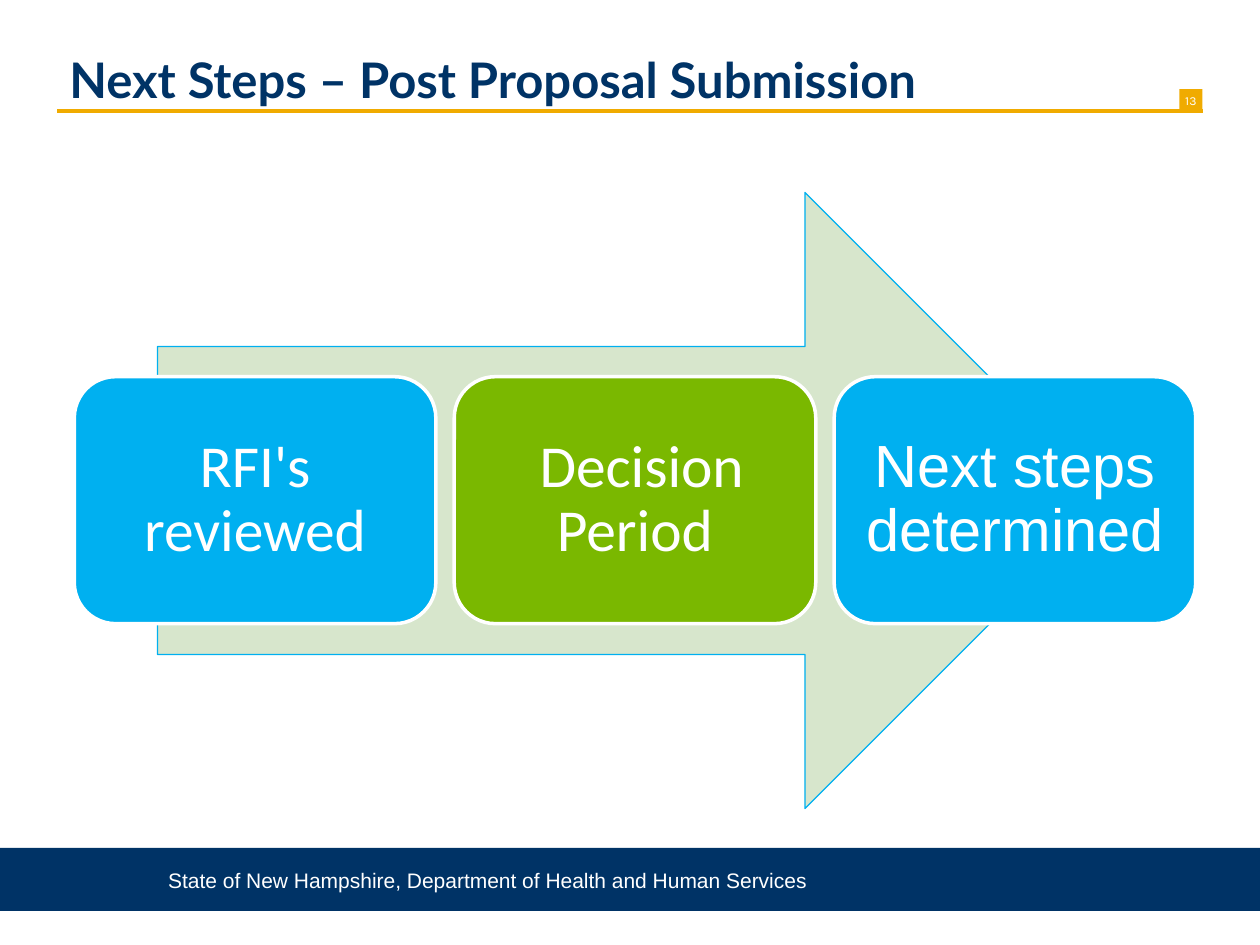
from dataclasses import dataclass

from lxml import etree
from pptx import Presentation
from pptx.dml.color import RGBColor
from pptx.enum.shapes import MSO_CONNECTOR, MSO_SHAPE
from pptx.enum.text import MSO_ANCHOR, PP_ALIGN
from pptx.oxml.ns import qn
from pptx.util import Pt

RECT = MSO_SHAPE.RECTANGLE
ROUNDED = MSO_SHAPE.ROUNDED_RECTANGLE
ARROW = MSO_SHAPE.RIGHT_ARROW
STRAIGHT = MSO_CONNECTOR.STRAIGHT
TOP, MIDDLE, BOTTOM = MSO_ANCHOR.TOP, MSO_ANCHOR.MIDDLE, MSO_ANCHOR.BOTTOM
LEFT, CENTER = PP_ALIGN.LEFT, PP_ALIGN.CENTER

NAVY, GOLD, WHITE = "003366", "F0AB00", "FFFFFF"
BLUE, GREEN, PALE_GREEN = "00B0F0", "7AB800", "D7E6CC"

STEP_LEFT, STEP_TOP = 42.5, 215.3
STEP_WIDTH, STEP_HEIGHT = 206.6, 141.1
STEP_PITCH = 217.1


@dataclass
class Box:
    left: float
    top: float
    width: float
    height: float

    def in_points(self):
        return Pt(self.left), Pt(self.top), Pt(self.width), Pt(self.height)


@dataclass
class Style:
    font: str
    size: float
    color: str = WHITE
    bold: bool = False


@dataclass
class Step:
    label: str
    fill: str
    font: str


STEPS = [
    Step("RFI's reviewed", BLUE, "Calibri"),
    Step("\u00a0Decision Period".replace("\u00a0", " "), GREEN, "Calibri"),
    Step("Next steps determined", BLUE, "Arial"),
]


def rgb(color: str) -> RGBColor:
    return RGBColor.from_string(color)


def add_filled(slide, kind, box: Box, fill: str, line: str = "", weight: float = 0):
    shape = slide.shapes.add_shape(kind, *box.in_points())
    shape.shadow.inherit = False
    shape.fill.solid()
    shape.fill.fore_color.rgb = rgb(fill)
    if line:
        shape.line.color.rgb = rgb(line)
        shape.line.width = Pt(weight)
    else:
        shape.line.fill.background()
    return shape


def write(shape, text: str, style: Style, anchor=TOP, align=LEFT,
          inset_x: float = 7.2, inset_y: float = 3.6, wrap: bool = True):
    frame = shape.text_frame
    frame.word_wrap = wrap
    frame.vertical_anchor = anchor
    frame.margin_left = frame.margin_right = Pt(inset_x)
    frame.margin_top = frame.margin_bottom = Pt(inset_y)
    paragraph = frame.paragraphs[0]
    paragraph.alignment = align
    run = paragraph.add_run()
    run.text = text
    run.font.name = style.font
    run.font.size = Pt(style.size)
    run.font.bold = style.bold
    run.font.color.rgb = rgb(style.color)
    return paragraph


def add_rule(slide, left: float, right: float, y: float, color: str, weight: float):
    rule = slide.shapes.add_connector(STRAIGHT, Pt(left), Pt(y), Pt(right), Pt(y))
    rule.line.color.rgb = rgb(color)
    rule.line.width = Pt(weight)
    etree.SubElement(rule._element.spPr, qn("a:effectLst"))


def add_step(slide, index: int, step: Step):
    box = Box(STEP_LEFT + index * STEP_PITCH, STEP_TOP, STEP_WIDTH, STEP_HEIGHT)
    card = add_filled(slide, ROUNDED, box, step.fill, WHITE, 2)
    label = write(card, step.label, Style(step.font, 34), MIDDLE, CENTER, 10, 10)
    label.line_spacing = 0.9


def main():
    deck = Presentation()
    deck.slide_width, deck.slide_height = Pt(720), Pt(540)
    slide = deck.slides.add_slide(deck.slide_layouts[6])

    page_tag = add_filled(slide, RECT, Box(673.9, 51, 13.2, 13.2), GOLD)
    write(page_tag, "13", Style("Karla", 7), MIDDLE, CENTER, 0, 0, wrap=False)
    add_rule(slide, 32.6, 687.4, 63.5, GOLD, 2)

    add_filled(slide, RECT, Box(0, 484.5, 720, 36), NAVY)
    department = slide.shapes.add_textbox(*Box(89, 492, 541, 21.6).in_points())
    write(department, "State of New Hampshire, Department of Health and Human Services",
          Style("Arial", 12))

    title = slide.shapes.add_textbox(*Box(32.6, 24.5, 627, 41).in_points())
    write(title, "Next Steps – Post Proposal Submission",
          Style("Lato", 28, NAVY, bold=True), BOTTOM)

    add_filled(slide, ARROW, Box(90, 110, 546, 352), PALE_GREEN, BLUE, 0.75)
    for index, step in enumerate(STEPS):
        add_step(slide, index, step)

    deck.save("out.pptx")


if __name__ == "__main__":
    main()
